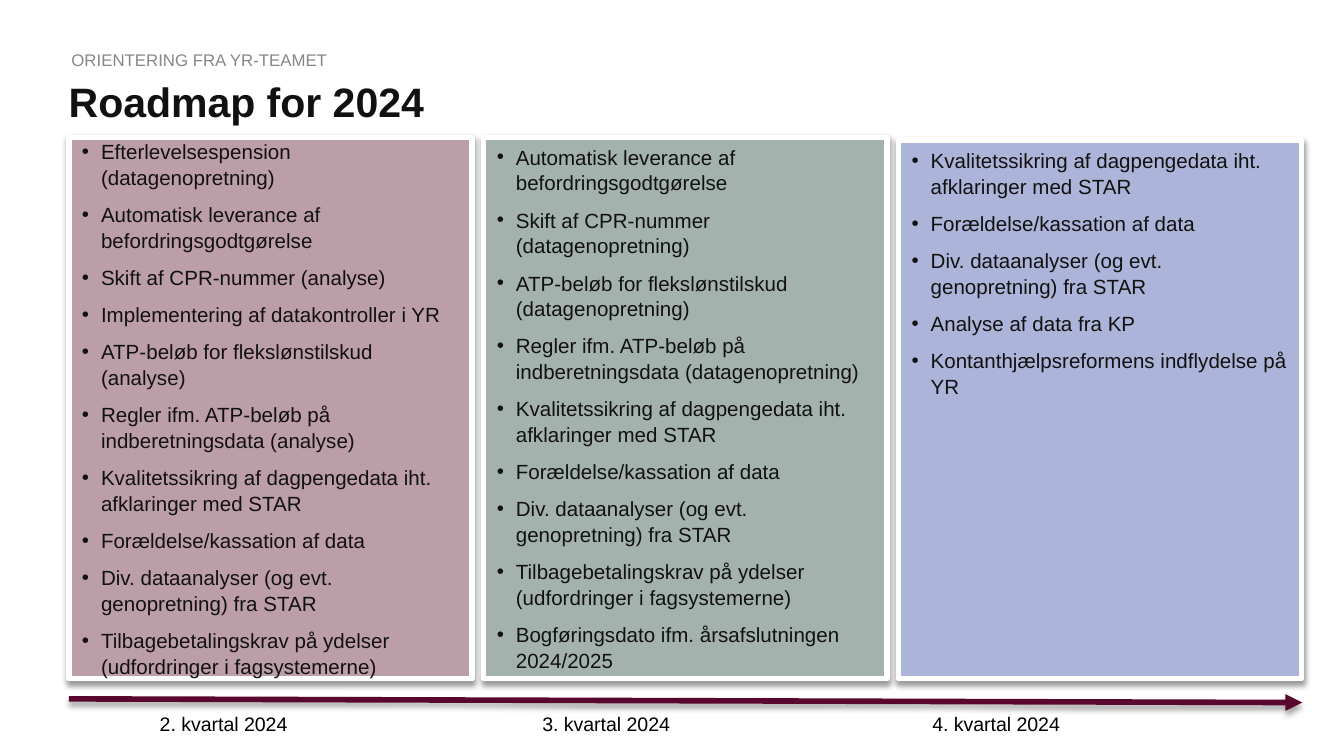
from lxml import etree
from pptx import Presentation
from pptx import util as u
from pptx.dml.color import RGBColor
from pptx.enum import shapes, text
from pptx.oxml import ns

COLORS = {
    "ink": "111111", "black": "000000", "grey": "878787", "white": "FFFFFF",
    "arrow": "5A0730", "rose": "BC9EA9", "sage": "A4B2AD", "lavender": "ADB4D9",
}
FONT = "Arial"

TRANSPORT = "Automatisk leverance af befordringsgodtgørelse"
QUALITY = "Kvalitetssikring af dagpengedata iht. afklaringer med STAR"
OBSOLETE = "Forældelse/kassation af data"
ANALYSES = "Div. dataanalyser (og evt. genopretning) fra STAR"
REPAYMENT = "Tilbagebetalingskrav på ydelser (udfordringer i fagsystemerne)"

SECOND_QUARTER = [
    "Efterlevelsespension (datagenopretning)",
    TRANSPORT,
    "Skift af CPR-nummer (analyse)",
    "Implementering af datakontroller i YR",
    "ATP-beløb for flekslønstilskud (analyse)",
    "Regler ifm. ATP-beløb på indberetningsdata (analyse)",
    QUALITY, OBSOLETE, ANALYSES, REPAYMENT,
]
THIRD_QUARTER = [
    TRANSPORT,
    "Skift af CPR-nummer (datagenopretning)",
    "ATP-beløb for flekslønstilskud (datagenopretning)",
    "Regler ifm. ATP-beløb på indberetningsdata (datagenopretning)",
    QUALITY, OBSOLETE, ANALYSES, REPAYMENT,
    "Bogføringsdato ifm. årsafslutningen 2024/2025",
]
FOURTH_QUARTER = [
    QUALITY, OBSOLETE, ANALYSES,
    "Analyse af data fra KP",
    "Kontanthjælpsreformens indflydelse på YR",
]


def color(name):
    return RGBColor.from_string(COLORS[name])


def style(para, size, name, bold=False):
    for span in para.runs:
        span.font.name = FONT
        span.font.size = u.Pt(size)
        span.font.bold = bold
        span.font.color.rgb = color(name)


def add_shadow(shape, distance, opacity):
    properties = shape._element.spPr
    effects = properties.find(ns.qn("a:effectLst"))
    if effects is None:
        effects = etree.SubElement(properties, ns.qn("a:effectLst"))
    shadow = etree.SubElement(
        effects, ns.qn("a:outerShdw"), blurRad=str(u.Pt(3.1)),
        dist=str(u.Pt(distance)), dir="5400000", rotWithShape="0")
    tint = etree.SubElement(shadow, ns.qn("a:srgbClr"), val=COLORS["black"])
    etree.SubElement(tint, ns.qn("a:alpha"), val=str(opacity * 1000))


def add_bullet(para):
    properties = para._p.get_or_add_pPr()
    properties.set("marL", str(u.Cm(0.36)))
    properties.set("indent", str(-u.Cm(0.36)))
    etree.SubElement(properties, ns.qn("a:buFont"), typeface=FONT)
    etree.SubElement(properties, ns.qn("a:buChar"), char="•")


def add_text(page, box, words, size, name, bold=False, insets=None):
    frame = page.shapes.add_textbox(*map(u.Cm, box)).text_frame
    frame.word_wrap = True
    if insets:
        (frame.margin_left, frame.margin_top,
         frame.margin_right, frame.margin_bottom) = map(u.Cm, insets)
    frame.text = words
    para = frame.paragraphs[0]
    style(para, size, name, bold)
    return para


def add_heading(page, box):
    left, top, width, height = box
    title = add_text(page, (left, top + 0.61, width, height - 0.61),
                     "Roadmap for 2024", 22, "ink", True, (0, 0, 0, 0))
    title.line_spacing = 0.9
    add_text(page, (left, top, width / 2, 0.41),
             "ORIENTERING FRA YR-TEAMET", 9, "grey", insets=(0.05, 0, 0, 0))


def add_timeline(page, box, labels):
    left, top, width, drop = box
    arrow = page.shapes.add_connector(
        shapes.MSO_CONNECTOR.STRAIGHT, u.Cm(left), u.Cm(top),
        u.Cm(left + width), u.Cm(top + drop))
    arrow.line.width = u.Pt(3)
    arrow.line.color.rgb = color("arrow")
    etree.SubElement(arrow.line._get_or_add_ln(), ns.qn("a:tailEnd"), type="triangle")
    add_shadow(arrow, 1.8, 35)
    for offset, label in labels:
        add_text(page, (left + offset, top + 0.13, 3.7, 0.71), label, 10.5, "black")


def add_quarter(page, box, fill, items, anchor):
    card = page.shapes.add_shape(shapes.MSO_SHAPE.RECTANGLE, *map(u.Cm, box))
    card.fill.solid()
    card.fill.fore_color.rgb = color(fill)
    card.line.width = u.Pt(3)
    card.line.color.rgb = color("white")
    card.shadow.inherit = False
    add_shadow(card, 1.6, 38)
    frame = card.text_frame
    frame.word_wrap = True
    frame.vertical_anchor = anchor
    frame.text = "\n".join(items)
    for para in frame.paragraphs:
        add_bullet(para)
        para.alignment = text.PP_ALIGN.LEFT
        para.line_spacing = 1.05
        para.space_after = u.Pt(6)
        style(para, 11, "ink")


def main():
    deck = Presentation()
    deck.slide_width, deck.slide_height = u.Cm(25.4), u.Cm(14.29)
    page = deck.slides.add_slide(deck.slide_layouts[6])
    left, bottom, pitch = 1.3, 12.83, 7.84
    add_heading(page, (left, 0.94, 22.81, 2.41))
    add_timeline(page, (left, 13.21, 23.31, 0.07), [
        (1.47, "2. kvartal 2024"),
        (8.7, "3. kvartal 2024"),
        (16.07, "4. kvartal 2024"),
    ])
    middle, upper = text.MSO_ANCHOR.MIDDLE, text.MSO_ANCHOR.TOP
    quarters = [
        (2.6, "rose", SECOND_QUARTER, middle),
        (2.6, "sage", THIRD_QUARTER, middle),
        (2.65, "lavender", FOURTH_QUARTER, upper),
    ]
    for index, (top, fill, items, anchor) in enumerate(quarters):
        box = (left + index * pitch, top, 7.62, bottom - top)
        add_quarter(page, box, fill, items, anchor)
    deck.save("out.pptx")


if __name__ == "__main__":
    main()
